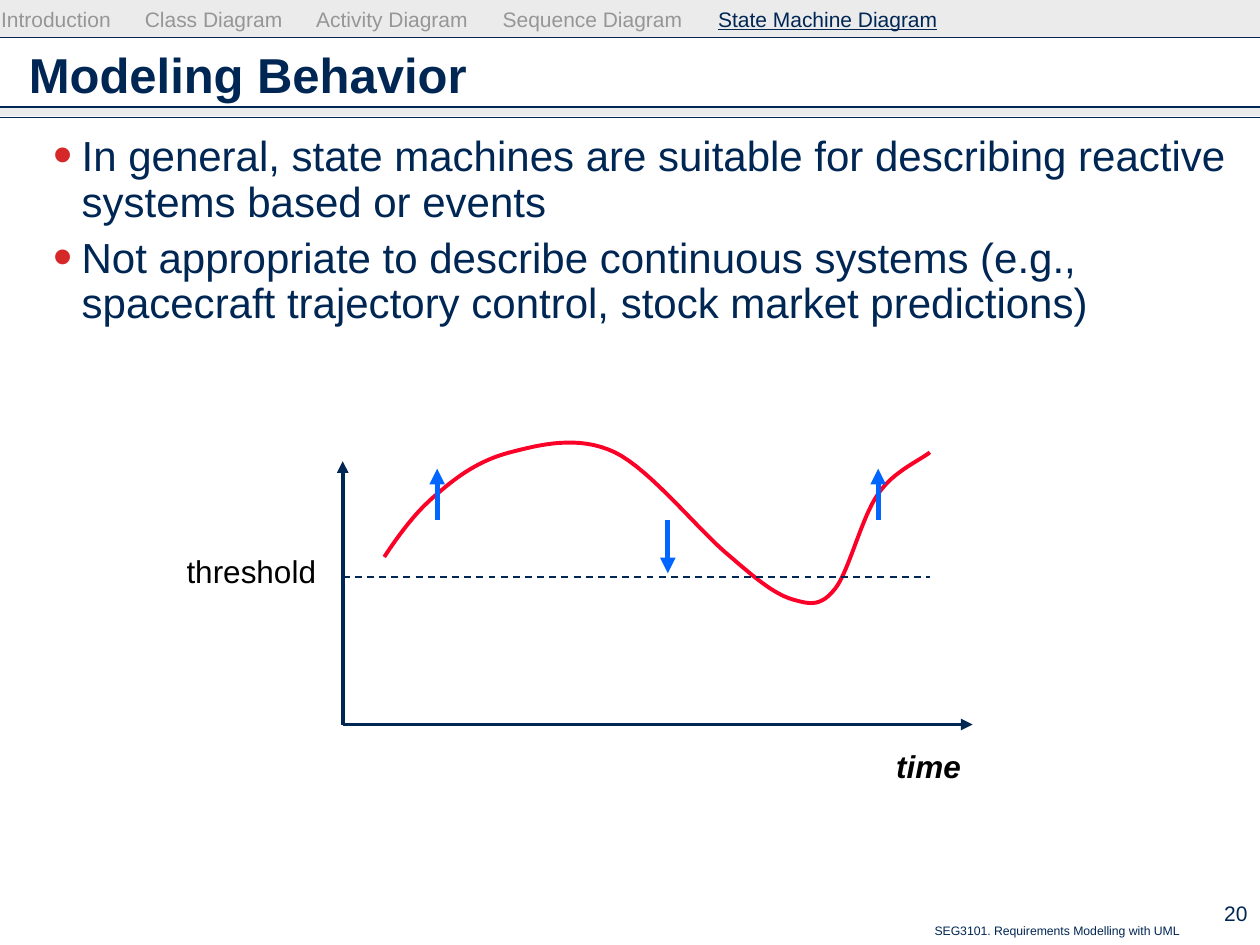
"""Build the Modeling Behavior slide with a threshold curve over time."""
from lxml.etree import SubElement
from pptx import Presentation
from pptx.dml.color import RGBColor
from pptx.enum.dml import MSO_LINE
from pptx.enum.shapes import MSO_CONNECTOR, MSO_SHAPE
from pptx.enum.text import MSO_ANCHOR, PP_ALIGN
from pptx.oxml.ns import qn
from pptx.util import Inches, Pt

COLORS = {"navy": "002654", "band": "CDCDCD", "muted": "969696", "bullet": "D62828",
          "curve": "FC0128", "arrow": "0066FF", "black": "000000"}
TITLE = "Modeling Behavior"
SECTIONS = ["Introduction", "Class Diagram", "Activity Diagram", "Sequence Diagram",
            "State Machine Diagram"]
SECTION_TABS = [1.14, 2.5, 3.98, 5.69]
BULLETS = [
    "In general, state machines are suitable for describing reactive systems based or events",
    "Not appropriate to describe continuous systems (e.g., spacecraft trajectory control, "
    "stock market predictions)",
]
WIDTH, HEIGHT = 10, 7.5
BANDS = [(0, 0.3), (0.85, 0.07)]
RULES = [0.3, 0.85, 0.93]
ORIGIN = (2.72, 5.75)
AXIS_ENDS = [(2.72, 3.66), (7.72, 5.75)]
THRESHOLD, CURVE_END = 4.58, 7.38
MARKERS = [(3.47, 3.72), (6.97, 3.72), (5.3, 4.55)]
MARKER_START = 4.13
CURVE_START = (3.05, 4.42)
CURVE = [
    [(3.17, 4.24), (3.3, 4.06), (3.47, 3.92)],
    [(3.63, 3.78), (3.81, 3.65), (4.05, 3.59)],
    [(4.28, 3.53), (4.59, 3.45), (4.88, 3.59)],
    [(5.17, 3.73), (5.56, 4.23), (5.8, 4.42)],
    [(6.03, 4.62), (6.16, 4.72), (6.3, 4.76)],
    [(6.44, 4.8), (6.52, 4.81), (6.63, 4.67)],
    [(6.74, 4.53), (6.84, 4.1), (6.97, 3.92)],
    [(7.09, 3.74), (7.31, 3.65), (7.38, 3.59)],
]
STEPS = 16


def color(name):
    return RGBColor.from_string(COLORS[name])


def format_font(font, size, name, bold=False, italic=False):
    font.name, font.size, font.bold, font.italic = "Arial", Pt(size), bold, italic
    font.color.rgb = color(name)


def add_text(slide, box, text, size, name, align=PP_ALIGN.LEFT, anchor=MSO_ANCHOR.TOP,
             wrap=True, **style):
    shape = slide.shapes.add_textbox(*map(Inches, box))
    frame = shape.text_frame
    frame.text = text
    frame.word_wrap, frame.vertical_anchor = wrap, anchor
    for paragraph in frame.paragraphs:
        paragraph.alignment = align
        for run in paragraph.runs:
            format_font(run.font, size, name, **style)
    return frame


def add_line(slide, start, end, name, width, arrow=False, dash=None):
    line = slide.shapes.add_connector(MSO_CONNECTOR.STRAIGHT, *map(Inches, start + end))
    line.line.color.rgb, line.line.width = color(name), Pt(width)
    if dash:
        line.line.dash_style = dash
    properties = line.element.spPr
    if arrow:
        SubElement(properties.find(qn("a:ln")), qn("a:tailEnd"), type="triangle")
    SubElement(properties, qn("a:effectLst"))


def add_frame(slide):
    for top, height in BANDS:
        band = slide.shapes.add_shape(MSO_SHAPE.RECTANGLE, 0, Inches(top),
                                      Inches(WIDTH), Inches(height))
        band.shadow.inherit = False
        band.fill.solid()
        band.fill.fore_color.rgb = color("band")
        band.line.fill.background()
        fill = band.element.spPr.find(qn("a:solidFill"))
        SubElement(fill[0], qn("a:alpha"), val="40000")
    for y in RULES:
        add_line(slide, (0, y), (WIDTH, y), "navy", 0.75)
    add_text(slide, (3.25, 7.28, 6.21, 0.22), "SEG3101. Requirements Modelling with UML",
             7, "navy", PP_ALIGN.RIGHT)
    add_text(slide, (9.3, 7.08, 0.7, 0.34), "20", 12, "navy", PP_ALIGN.RIGHT,
             MSO_ANCHOR.MIDDLE)


def add_navigation(slide):
    frame = add_text(slide, (0, 0.05, 7.9, 0.25), "", 12, "muted")
    frame.margin_left, frame.margin_top = Inches(0.01), 0
    paragraph = frame.paragraphs[0]
    tabs = SubElement(paragraph._p.get_or_add_pPr(), qn("a:tabLst"))
    for position in SECTION_TABS:
        SubElement(tabs, qn("a:tab"), pos=str(Inches(position)), algn="l")
    for text in ("\t".join(SECTIONS[:-1]) + "\t", SECTIONS[-1]):
        run = paragraph.add_run()
        run.text = text
        current = text == SECTIONS[-1]
        format_font(run.font, 12, "navy" if current else "muted")
        run.font.underline = current


def add_title(slide):
    title = slide.shapes.title
    title.left, title.top, title.width, title.height = map(Inches, (0.13, 0.26, 9.74, 0.66))
    title.text_frame.text = TITLE
    title.text_frame.vertical_anchor = MSO_ANCHOR.MIDDLE
    paragraph = title.text_frame.paragraphs[0]
    paragraph.alignment = PP_ALIGN.LEFT
    format_font(paragraph.runs[0].font, 28, "navy", bold=True)


def add_bullets(slide):
    frame = add_text(slide, (0.13, 1.02, 9.74, 6.1), "\n".join(BULLETS), 24, "navy")
    for index, paragraph in enumerate(frame.paragraphs):
        paragraph.line_spacing = Pt(26)
        paragraph.space_before = Pt(6 if index else 0)
        properties = paragraph._p.get_or_add_pPr()
        properties.set("marL", str(Inches(0.42)))
        properties.set("indent", str(Inches(-0.22)))
        bullet_color = SubElement(properties, qn("a:buClr"))
        SubElement(bullet_color, qn("a:srgbClr"), val=COLORS["bullet"])
        SubElement(properties, qn("a:buSzPct"), val="130000")
        SubElement(properties, qn("a:buFont"), typeface="Arial")
        SubElement(properties, qn("a:buChar"), char="•")


def curve_points():
    start = CURVE_START
    for first, second, end in CURVE:
        for step in range(1, STEPS + 1):
            t = step / STEPS
            u = 1 - t
            yield tuple(Inches(u**3 * a + 3 * u * u * t * b + 3 * u * t * t * c + t**3 * d)
                        for a, b, c, d in zip(start, first, second, end))
        start = end


def add_diagram(slide):
    builder = slide.shapes.build_freeform(*map(Inches, CURVE_START))
    builder.add_line_segments(list(curve_points()), close=False)
    curve = builder.convert_to_shape()
    curve.shadow.inherit = False
    curve.fill.background()
    curve.line.color.rgb, curve.line.width = color("curve"), Pt(2.25)
    for end in AXIS_ENDS:
        add_line(slide, ORIGIN, end, "navy", 2.25, arrow=True)
    for x, tip in MARKERS:
        add_line(slide, (x, MARKER_START), (x, tip), "arrow", 3, arrow=True)
    add_line(slide, (ORIGIN[0], THRESHOLD), (CURVE_END, THRESHOLD), "navy", 1,
             dash=MSO_LINE.DASH)
    add_text(slide, (7.01, 5.88, 0.72, 0.4), "time", 18, "black", PP_ALIGN.CENTER,
             MSO_ANCHOR.MIDDLE, wrap=False, bold=True, italic=True)
    add_text(slide, (1.38, 4.33, 1.23, 0.4), "threshold", 18, "black", PP_ALIGN.CENTER,
             MSO_ANCHOR.MIDDLE, wrap=False)


def main():
    presentation = Presentation()
    presentation.slide_width, presentation.slide_height = Inches(WIDTH), Inches(HEIGHT)
    slide = presentation.slides.add_slide(presentation.slide_layouts[5])
    add_frame(slide)
    add_title(slide)
    add_bullets(slide)
    add_diagram(slide)
    add_navigation(slide)
    presentation.save("out.pptx")


if __name__ == "__main__":
    main()
